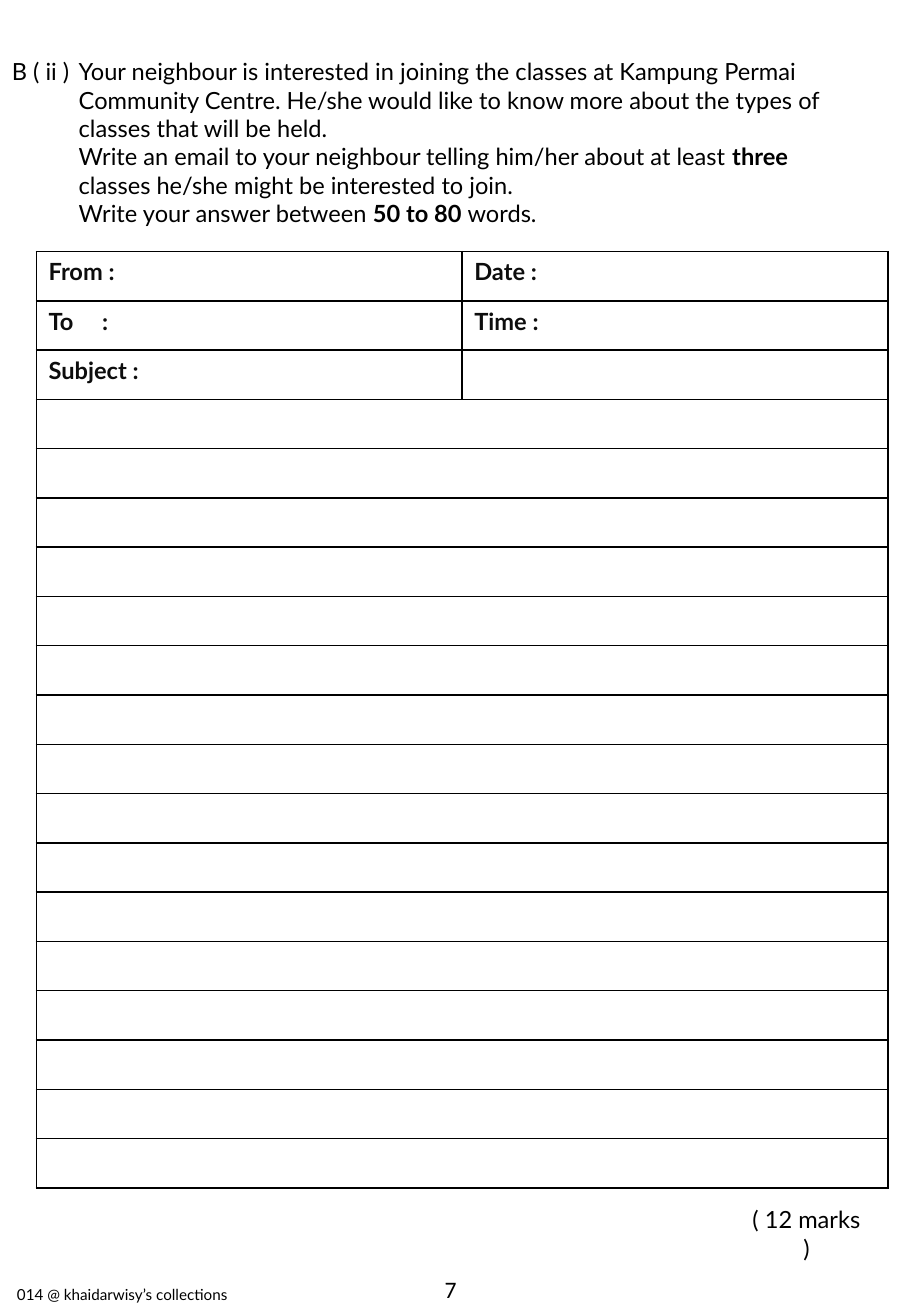
"""Build an exam page with an email writing task and a ruled answer table."""
from lxml import etree
from pptx import Presentation
from pptx.dml.color import RGBColor
from pptx.enum.text import MSO_AUTO_SIZE, PP_ALIGN
from pptx.oxml.ns import qn
from pptx.util import Pt

LEFT, CENTER = PP_ALIGN.LEFT, PP_ALIGN.CENTER
FIT_SHAPE = MSO_AUTO_SIZE.SHAPE_TO_FIT_TEXT
BLACK = RGBColor(0x00, 0x00, 0x00)
INK = RGBColor(0x0D, 0x0D, 0x0D)
PX = 9144

QUESTION = [
    "B ( ii )\tYour neighbour is interested in joining the classes at Kampung Permai",
    "Community Centre. He/she would like to know more about the types of",
    "classes that will be held.",
    "Write an email to your neighbour telling him/her about at least *three*",
    "classes he/she might be interested to join.",
    "Write your answer between *50 to 80 *words.",
]
HEADINGS = [["From :", "Date :"], ["To\t:", "Time :"], ["Subject :", ""]]
ANSWER_LINES = 16
QUESTION_INDENT = 55
COLON_STOP = 44


class Page:
    """Hold the deck, its single slide and the text style."""

    def __init__(self, width, height):
        self.deck = Presentation()
        self.deck.slide_width, self.deck.slide_height = width * PX, height * PX
        self.slide = self.deck.slides.add_slide(self.deck.slide_layouts[6])
        self.style = {"name": "Lato", "size": Pt(14), "bold": False}

    def add_spans(self, para, text, color=BLACK, **changes):
        """Add spans to a paragraph, making starred parts bold."""
        for number, part in enumerate(text.split("*")):
            if not part:
                continue
            span = para.add_run()
            span.text = part
            style = {**self.style, "bold": number % 2 == 1, **changes}
            for key, value in style.items():
                setattr(span.font, key, value)
            span.font.color.rgb = color

    def add_text(self, bounds, lines, align=CENTER, wrap=False, indent=0, **changes):
        """Add a text box whose first line hangs by the indent."""
        box = self.slide.shapes.add_textbox(*(length * PX for length in bounds))
        frame = box.text_frame
        frame.word_wrap, frame.auto_size = wrap, FIT_SHAPE
        for number, line in enumerate(lines):
            para = frame.add_paragraph() if number else frame.paragraphs[0]
            para.alignment = align
            if indent:
                properties = para._p.get_or_add_pPr()
                properties.set("marL", str(indent * PX))
                properties.set("indent", str(0 if number else -indent * PX))
            self.add_spans(para, line, **changes)

    def rule_cell(self, cell):
        """Clear the fill of a cell and draw its four borders."""
        cell.fill.background()
        properties = cell._tc.get_or_add_tcPr()
        for position, side in enumerate(("lnL", "lnR", "lnT", "lnB")):
            line = etree.Element(qn(f"a:{side}"), w=str(Pt(1)))
            fill = etree.SubElement(line, qn("a:solidFill"))
            etree.SubElement(fill, qn("a:srgbClr"), val=str(BLACK))
            properties.insert(position, line)

    def add_form(self, bounds, headings, answer_lines, tab_stop):
        """Add a table of headings followed by full-width answer lines."""
        rows = len(headings) + answer_lines
        frame = self.slide.shapes.add_table(
            rows, len(headings[0]), *(length * PX for length in bounds))
        table = frame.table
        table.first_row = table.horz_banding = False
        for cell in table.iter_cells():
            cell.margin_bottom = 0
            self.rule_cell(cell)
        for row, labels in enumerate(headings):
            for column, label in enumerate(labels):
                para = table.cell(row, column).text_frame.paragraphs[0]
                if "\t" in label:
                    stops = etree.SubElement(para._p.get_or_add_pPr(), qn("a:tabLst"))
                    etree.SubElement(
                        stops, qn("a:tab"), pos=str(tab_stop * PX), algn="l")
                self.add_spans(para, label, color=INK, bold=True)
        for row in range(len(headings), rows):
            table.cell(row, 0).merge(table.cell(row, len(headings[0]) - 1))


def main():
    """Compose the page and save it."""
    page = Page(750, 1083)
    page.add_text((0, 42, 750, 199), QUESTION, LEFT, True, QUESTION_INDENT)
    page.add_text((0, 1053, 201, 25), ["014 @ khaidarwisy’s collections"], size=Pt(9))
    page.add_text((356, 1044, 30, 34), ["7"], name="Calibri")
    page.add_form((30, 207, 701, 771), HEADINGS, ANSWER_LINES, COLON_STOP)
    page.add_text((609, 987, 110, 34), ["( 12 marks )"], wrap=True)
    page.deck.save("out.pptx")


if __name__ == "__main__":
    main()
